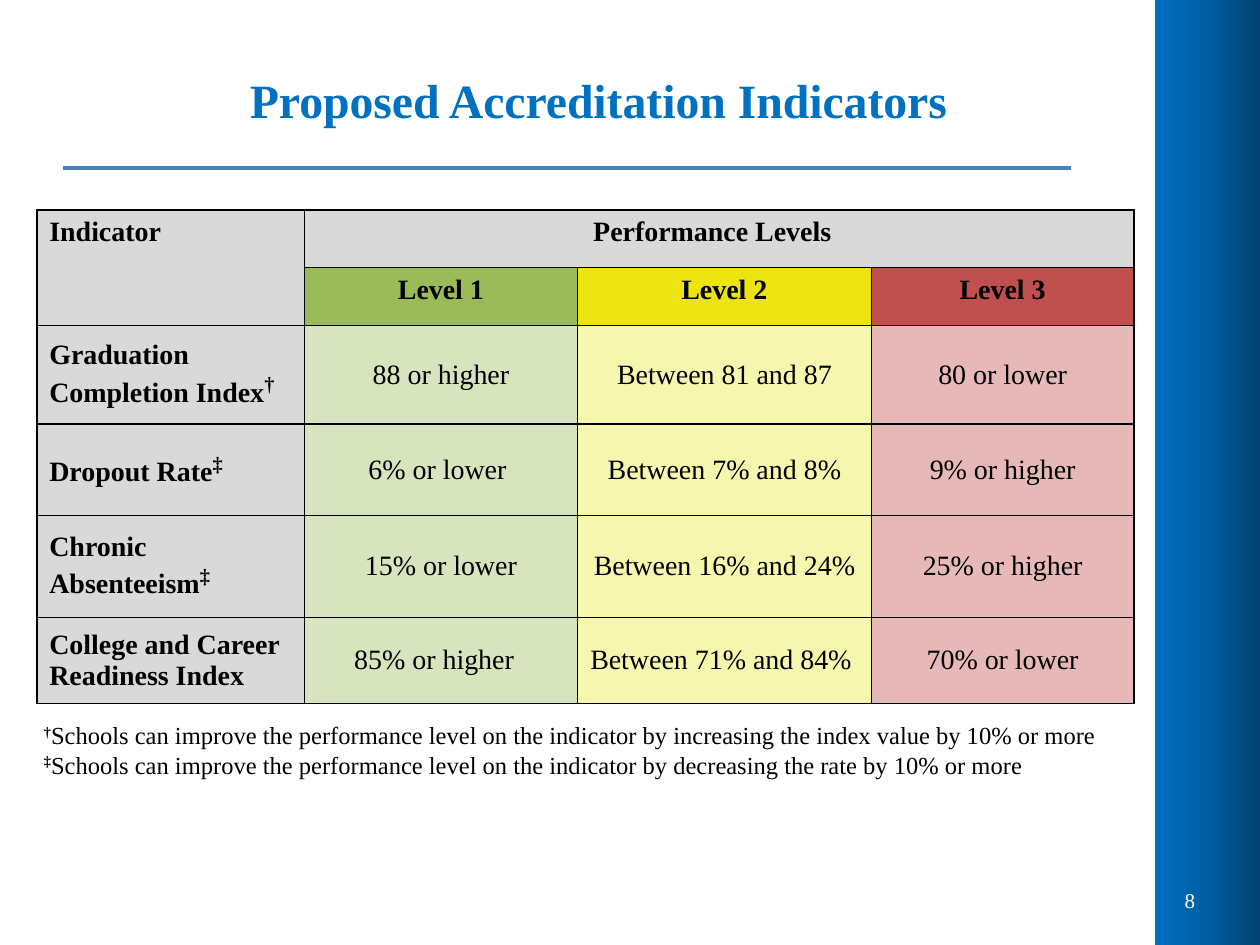
"""Build the slide of proposed accreditation indicators."""
from copy import deepcopy
from lxml.etree import SubElement
from pptx import Presentation
from pptx.dml.color import RGBColor as Rgb
from pptx.enum.shapes import MSO_CONNECTOR as Connector, MSO_SHAPE as Shape
from pptx.enum.text import MSO_ANCHOR as Anchor, PP_ALIGN as Align
from pptx.oxml import parse_xml
from pptx.oxml.ns import nsdecls, qn
from pptx.util import Inches, Pt

COLORS = {
    "black": "000000", "white": "FFFFFF", "title": "0070C0", "rule": "4B7EBC",
    "band_mid": "005EA2", "band_end": "004272", "gray": "D9D9D9",
    "green": "9BBB59", "yellow": "EDE311", "red": "C0504D",
    "pale_green": "D7E4BD", "pale_yellow": "F5F7AF", "pale_red": "E6B9B8",
}


def grid(*units):
    return [Inches(unit / 12) for unit in units]


def write(frame, paragraphs, size=16, color="black", align=Align.LEFT, bold=False, mark_size=None):
    frame.word_wrap = True
    for index, (text, mark, mark_first) in enumerate(paragraphs):
        para = frame.add_paragraph() if index else frame.paragraphs[0]
        para.alignment = align
        pieces = [(text, False), (mark, True)]
        for piece, raised in reversed(pieces) if mark_first else pieces:
            if piece:
                span = para.add_run()
                span.text = piece
                font = span.font
                font.name = "Times New Roman"
                font.size = Pt(mark_size if raised and mark_size else size)
                font.bold = bold or raised
                font.color.rgb = Rgb.from_string(COLORS[color])
                if raised:
                    font._element.set("baseline", "30000")


deck = Presentation()
deck.slide_width, deck.slide_height = grid(120, 90)
page = deck.slides.add_slide(deck.slide_layouts[6])

band = page.shapes.add_shape(Shape.RECTANGLE, *grid(110, 0, 10, 90))
band.shadow.inherit = False
band.line.fill.background()
band.fill.gradient()
band.fill.gradient_angle = 0
first, last = band.fill.gradient_stops
first.position, last.position = 0, 1
first.color.rgb = Rgb.from_string(COLORS["title"])
last.color.rgb = Rgb.from_string(COLORS["band_end"])
stop_list = band._element.spPr.find(qn("a:gradFill")).find(qn("a:gsLst"))
middle = deepcopy(stop_list[0])
middle.set("pos", "50000")
middle[0].set("val", COLORS["band_mid"])
stop_list.insert(1, middle)

HEADERS = [("Level 1", "green"), ("Level 2", "yellow"), ("Level 3", "red")]
INDICATORS = [
    ("Graduation Completion Index", "†", "88 or higher", "Between 81 and 87", "80 or lower"),
    ("Dropout Rate", "‡", "6% or lower ", "Between 7% and 8%", "9% or higher"),
    ("Chronic Absenteeism", "‡", "15% or lower", "Between 16% and 24%", "25% or higher"),
    ("College and Career Readiness Index", "", "85% or higher", "Between 71% and 84% ", "70% or lower"),
]
COLUMNS = [25.5, 26, 28, 25]
ROWS = [5.5, 5.5, 9.4, 8.7, 9.7, 8.2]

table = page.shapes.add_table(
    len(ROWS), len(COLUMNS), *grid(3.5, 20, sum(COLUMNS), sum(ROWS))).table
table.first_row = table.horz_banding = False
for column, width in zip(table.columns, grid(*COLUMNS)):
    column.width = width
for row, height in zip(table.rows, grid(*ROWS)):
    row.height = height
for cell in table.iter_cells():
    cell.fill.solid()
    cell.fill.fore_color.rgb = Rgb.from_string(COLORS["gray"])
    for place, side in enumerate("LRTB"):
        cell._tc.get_or_add_tcPr().insert(place, parse_xml(
            f'<a:ln{side} {nsdecls("a")} w="12700"><a:solidFill>'
            f'<a:srgbClr val="{COLORS["black"]}"/></a:solidFill></a:ln{side}>'))
table.cell(0, 0).merge(table.cell(1, 0))
table.cell(0, 1).merge(table.cell(0, 3))

write(table.cell(0, 0).text_frame, [("Indicator", "", False)], bold=True)
write(table.cell(0, 1).text_frame, [("Performance Levels", "", False)], bold=True, align=Align.CENTER)
for column, (label, color) in enumerate(HEADERS, 1):
    cell = table.cell(1, column)
    cell.fill.fore_color.rgb = Rgb.from_string(COLORS[color])
    write(cell.text_frame, [(label, "", False)], bold=True, align=Align.CENTER)
for row, (name, mark, *levels) in enumerate(INDICATORS, 2):
    cell = table.cell(row, 0)
    cell.vertical_anchor = Anchor.MIDDLE
    write(cell.text_frame, [(name, mark, False)], bold=True, mark_size=20)
    for column, level in enumerate(levels, 1):
        cell = table.cell(row, column)
        cell.vertical_anchor = Anchor.MIDDLE
        cell.fill.fore_color.rgb = Rgb.from_string(COLORS["pale_" + HEADERS[column - 1][1]])
        write(cell.text_frame, [(level, "", False)], align=Align.CENTER)
for row in (0, 5):
    table.cell(row, 1).margin_right = Inches(0.21)

SCHOOLS = "Schools can improve the performance level on the indicator by "
TEXTS = [
    ((7, 3, 100, 13), Anchor.MIDDLE, [("Proposed Accreditation Indicators", "", False)],
     dict(size=27.3, color="title", bold=True, align=Align.CENTER)),
    ((3, 68, 104, 6.8), Anchor.TOP,
     [(SCHOOLS + "increasing the index value by 10% or more", "†", True),
      (SCHOOLS + "decreasing the rate by 10% or more", "‡", True)], dict(size=14)),
    ((110, 83.4, 5, 4.6), Anchor.MIDDLE, [("8", "", False)],
     dict(size=12, color="white", align=Align.RIGHT)),
]
for place, anchor, paragraphs, style in TEXTS:
    box = page.shapes.add_textbox(*grid(*place))
    box.text_frame.vertical_anchor = anchor
    write(box.text_frame, paragraphs, **style)

rule = page.shapes.add_connector(Connector.STRAIGHT, *grid(6, 16, 102, 16))
rule.line.color.rgb = Rgb.from_string(COLORS["rule"])
rule.line.width = Pt(2)
SubElement(rule._element.spPr, qn("a:effectLst"))

deck.save("out.pptx")
